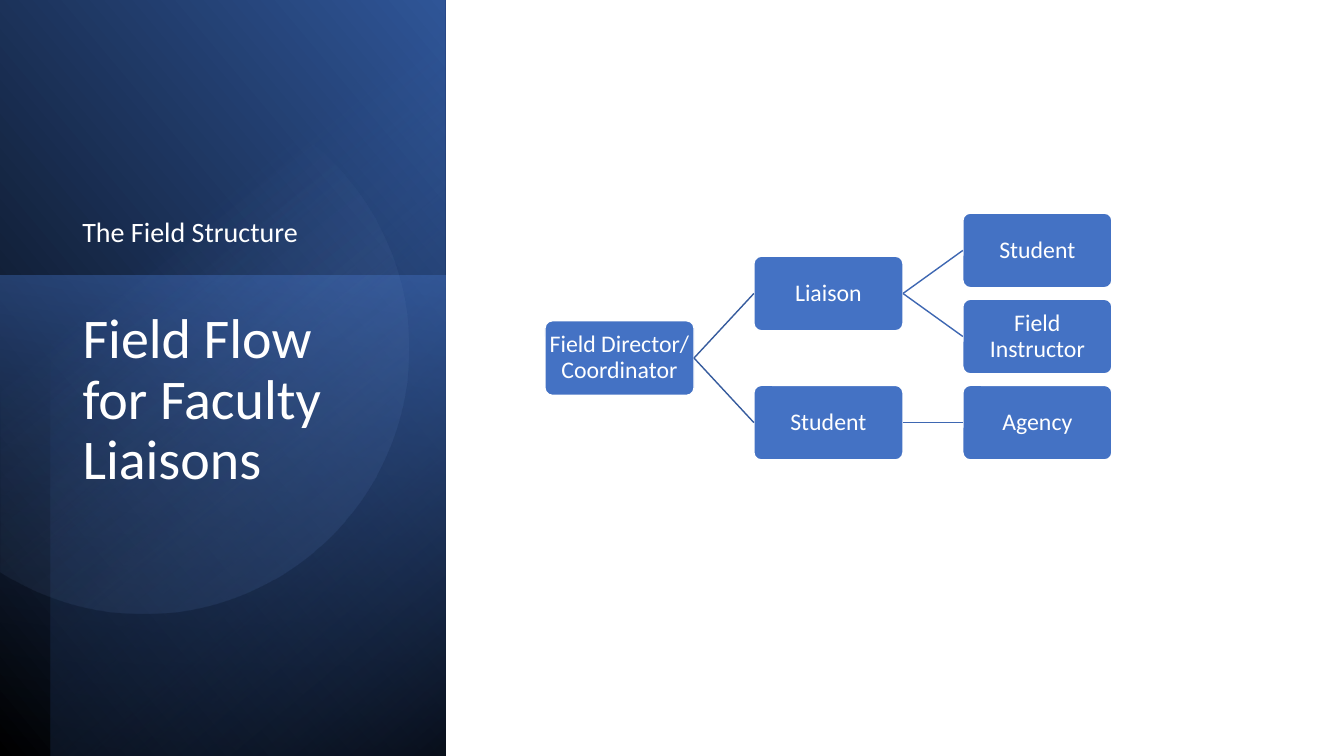
"""Build the slide showing the field structure for faculty liaisons."""
from dataclasses import dataclass
from itertools import pairwise
from math import cos, radians, sin, tan
from typing import Any

from lxml.etree import SubElement
from pptx import Presentation
from pptx.dml.color import RGBColor
from pptx.enum.shapes import MSO_CONNECTOR as Connector, MSO_SHAPE as Preset
from pptx.enum.text import MSO_ANCHOR as Anchor, PP_ALIGN as Align
from pptx.oxml.ns import qn
from pptx.util import Pt

SCALE = 9525


@dataclass(frozen=True)
class Theme:
    font: str = "Calibri"
    white: str = "FFFFFF"
    black: str = "000000"
    box: str = "4472C4"
    navy: str = "203864"
    royal: str = "2F5597"
    pale: str = "8FAADC"
    links: tuple[str, ...] = ("365B9D", "3E67B2")
    title_size: int = 40
    subtitle_size: int = 20
    box_size: int = 17


@dataclass(frozen=True)
class Stop:
    position: float
    color: str
    opacity: int = 100


@dataclass(frozen=True)
class Gradient:
    angle: int
    start: Stop
    end: Stop


@dataclass(frozen=True)
class Panel:
    left: int
    top: int
    width: int
    height: int
    rotation: int
    flipped: bool
    gradient: Gradient


@dataclass(frozen=True)
class Role:
    label: str
    reports: tuple["Role", ...] = ()


THEME = Theme()
PANELS = (
    Panel(-149, 149, 722, 424, 90, True,
          Gradient(310, Stop(0, THEME.black), Stop(1, THEME.royal))),
    Panel(-16, 279, 457, 424, 270, False,
          Gradient(190, Stop(0, THEME.box, 50), Stop(1, THEME.navy, 0))),
    Panel(-124, 172, 720, 376, 270, True,
          Gradient(220, Stop(0, THEME.black, 59), Stop(0.69, THEME.box, 0))),
)
DISC_GRADIENT = Gradient(310, Stop(0.39, THEME.pale, 0), Stop(1, THEME.royal, 26))
DISC_X, DISC_Y, DISC_RADIUS = 174, 378, 252.5
DISC_ANGLES = (-224, -180, -90, 0, 21)
DIRECTOR = Role("Field Director/ Coordinator", (
    Role("Liaison", (Role("Student"), Role("Field Instructor"))),
    Role("Student", (Role("Agency"),)),
))
BOX_WIDTH, BOX_HEIGHT = 142, 71
TREE_LEFT, TREE_TOP = 519, 203
COLUMN_PITCH, ROW_PITCH = 199, 82
RIGHT_SIDE, LEFT_SIDE = 3, 1


def px(length: float) -> int:
    """Turn px into EMU."""
    return round(length * SCALE)


def apply(target: Any, values: dict[str, Any]) -> None:
    """Set each named attribute on the target."""
    for name, value in values.items():
        setattr(target, name, value)


def rgb(color: str) -> RGBColor:
    """Turn a hex string into a colour."""
    return RGBColor.from_string(color)


def paint_gradient(shape: Any, gradient: Gradient) -> None:
    """Fill a borderless shape with a two-stop gradient."""
    shape.shadow.inherit = False
    shape.line.fill.background()
    shape.fill.gradient()
    shape.fill.gradient_angle = 360 - gradient.angle
    for target, stop in zip(shape.fill.gradient_stops, (gradient.start, gradient.end)):
        target.position = stop.position
        target.color.rgb = rgb(stop.color)
        if stop.opacity < 100:
            for color in target._gs.iter(qn("a:srgbClr")):
                SubElement(color, qn("a:alpha"), val=str(stop.opacity * 1000))


def draw_panel(shapes: Any, panel: Panel) -> None:
    """Draw one layer of the dark side panel."""
    layer = shapes.add_shape(Preset.RECTANGLE, px(panel.left), px(panel.top),
                             px(panel.width), px(panel.height))
    layer.rotation = panel.rotation
    if panel.flipped:
        layer._element.spPr.xfrm.set("flipH", "1")
    paint_gradient(layer, panel.gradient)


def rim_point(angle: float, pull: float = 0) -> tuple[int, int]:
    """Find a point on the disc's rim, moved along its tangent by a share of the radius."""
    turn = radians(angle)
    return (px(DISC_X + DISC_RADIUS * (cos(turn) - pull * sin(turn))),
            px(DISC_Y + DISC_RADIUS * (sin(turn) + pull * cos(turn))))


def draw_disc(shapes: Any) -> None:
    """Draw the circle cut off by the left slide edge."""
    rim = [rim_point(angle) for angle in DISC_ANGLES]
    outline = shapes.build_freeform(*rim[0])
    outline.add_line_segments(rim[1:], close=True)
    disc = outline.convert_to_shape()
    sides = list(disc._element.iter(qn("a:lnTo")))
    for side, (start, end) in zip(sides, pairwise(DISC_ANGLES)):
        pull = 4 / 3 * tan(radians(end - start) / 4)
        side.tag = qn("a:cubicBezTo")
        for index, (x, y) in enumerate((rim_point(start, pull), rim_point(end, -pull))):
            handle = SubElement(side, qn("a:pt"), x=str(x - disc.left), y=str(y - disc.top))
            side.insert(index, handle)
    disc.rotation = 101.6
    paint_gradient(disc, DISC_GRADIENT)


def write(shape: Any, text: str, size: int, align: Align, frame: dict[str, Any]) -> None:
    """Write white text into a shape."""
    apply(shape.text_frame, {"text": text, "word_wrap": True} | frame)
    paragraph = shape.text_frame.paragraphs[0]
    apply(paragraph, {"alignment": align, "line_spacing": 0.9})
    font = paragraph.runs[0].font
    apply(font, {"name": THEME.font, "size": Pt(size)})
    font.color.rgb = rgb(THEME.white)


def draw_role_box(shapes: Any, label: str, left: int, top: float) -> Any:
    """Draw the box of one role."""
    box = shapes.add_shape(Preset.ROUNDED_RECTANGLE, px(left), px(top),
                           px(BOX_WIDTH), px(BOX_HEIGHT))
    box.adjustments[0] = 0.1
    box.shadow.inherit = False
    box.fill.solid()
    box.fill.fore_color.rgb = rgb(THEME.box)
    box.line.color.rgb = rgb(THEME.white)
    box.line.width = Pt(1)
    margins = {f"margin_{side}": px(1) for side in ("left", "top", "right", "bottom")}
    write(box, label, THEME.box_size, Align.CENTER,
          margins | {"vertical_anchor": Anchor.MIDDLE})
    return box


def link(shapes: Any, senior: Any, junior: Any, color: str) -> None:
    """Join two role boxes with a line."""
    line = shapes.add_connector(Connector.STRAIGHT, 0, 0, 0, 0)
    line.begin_connect(senior, RIGHT_SIDE)
    line.end_connect(junior, LEFT_SIDE)
    line.line.color.rgb = rgb(color)
    line.line.width = Pt(1)
    SubElement(line._element.spPr, qn("a:effectLst"))


def leaf_count(role: Role) -> int:
    """Count the rows that a role takes up."""
    return sum(map(leaf_count, role.reports)) or 1


def role_top(role: Role, row: int) -> float:
    """Centre a role between its first and last report."""
    if not role.reports:
        return TREE_TOP + row * ROW_PITCH
    last = role.reports[-1]
    last_row = row + leaf_count(role) - leaf_count(last)
    return (role_top(role.reports[0], row) + role_top(last, last_row)) / 2


def draw_tree(shapes: Any, role: Role, depth: int = 0, row: int = 0) -> Any:
    """Draw a role with everyone below it."""
    box = draw_role_box(shapes, role.label, TREE_LEFT + depth * COLUMN_PITCH,
                        role_top(role, row))
    for report in role.reports:
        link(shapes, box, draw_tree(shapes, report, depth + 1, row), THEME.links[depth])
        row += leaf_count(report)
    return box


deck = Presentation()
apply(deck, {"slide_width": px(1280), "slide_height": px(720)})
shapes = deck.slides.add_slide(deck.slide_layouts[5]).shapes
for panel in PANELS:
    draw_panel(shapes, panel)
draw_disc(shapes)
title = shapes.title
shapes._spTree.append(title._element)
apply(title, {"left": px(69), "top": px(291), "width": px(302), "height": px(323)})
write(title, "Field Flow for Faculty Liaisons", THEME.title_size, Align.LEFT,
      {"vertical_anchor": Anchor.TOP})
subtitle = shapes.add_textbox(px(69), px(85), px(306), px(156))
write(subtitle, "The Field Structure", THEME.subtitle_size, Align.LEFT,
      {"vertical_anchor": Anchor.BOTTOM})
draw_tree(shapes, DIRECTOR)
deck.save("out.pptx")
